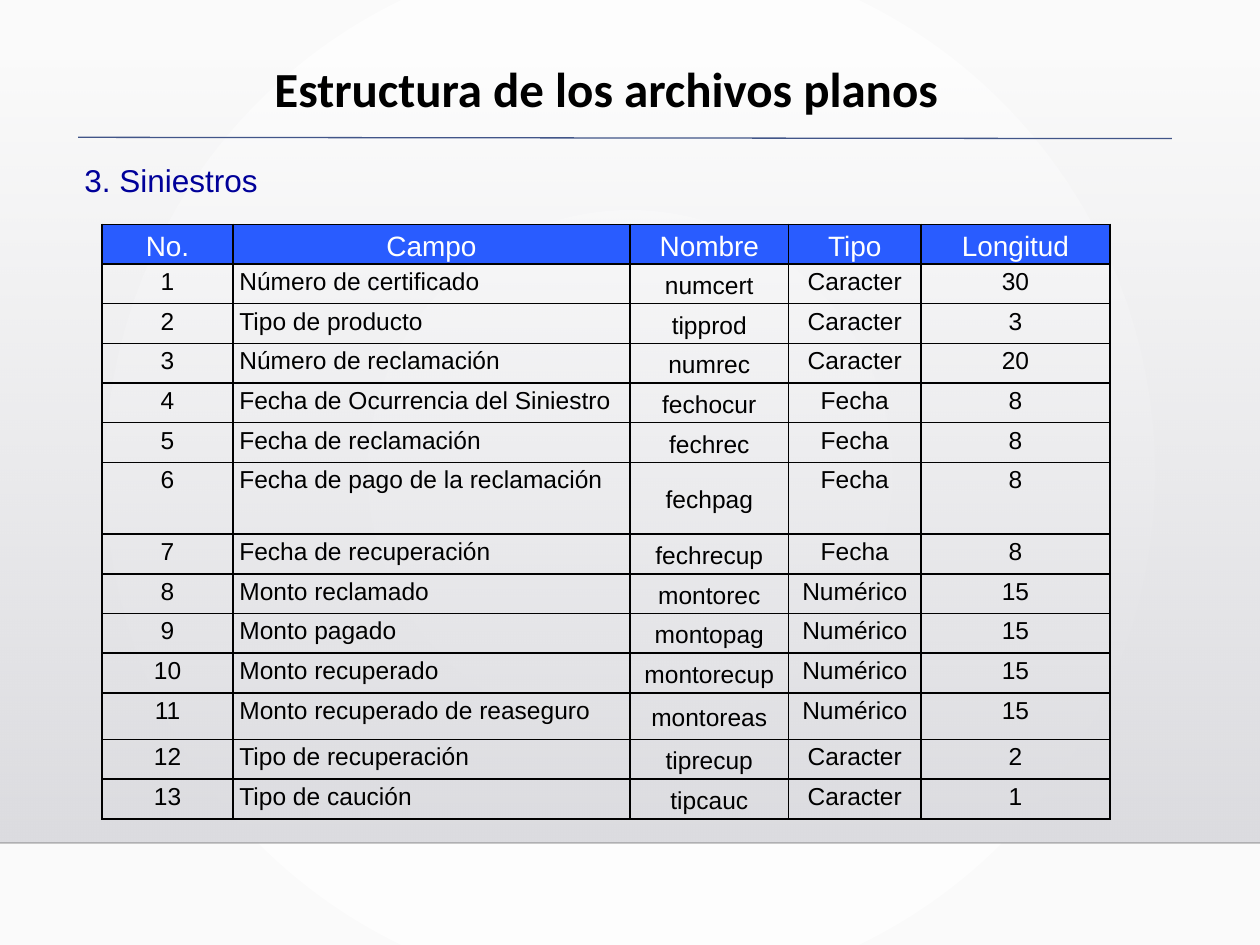
"""Build the slide that lists the fields of the claims file."""
import dataclasses

import lxml.etree
import pptx
import pptx.dml.color
import pptx.enum.shapes
import pptx.enum.text
import pptx.oxml
import pptx.oxml.ns
import pptx.util

Inches = pptx.util.Inches
ALIGN = pptx.enum.text.PP_ALIGN
ANCHOR = pptx.enum.text.MSO_ANCHOR
qn = pptx.oxml.ns.qn

HUES = {
    "black": "000000",
    "white": "FFFFFF",
    "paper": "FAFAFA",
    "mist": "DCDCE0",
    "fog": "DEDEE2",
    "edge": "000001",
    "rule": "415588",
    "navy": "000099",
    "blue": "295CFF",
}


@dataclasses.dataclass(frozen=True)
class Field:
    """One field of the flat file."""
    label: str
    code: str
    kind: str
    size: int
    height: float | None = None


@dataclasses.dataclass(frozen=True)
class Line:
    """A straight line with its ends in inches."""
    start: tuple[float, float]
    end: tuple[float, float]
    hue: str
    width: float
    alpha: int = 100


HEADS = ("No.", "Campo", "Nombre", "Tipo", "Longitud")
WIDTHS = (1.04, 3.15, 1.26, 1.05, 1.5)
TALL = 4.72
FIELDS = (
    Field("Número de certificado", "numcert", "Caracter", 30),
    Field("Tipo de producto", "tipprod", "Caracter", 3),
    Field("Número de reclamación", "numrec", "Caracter", 20),
    Field("Fecha de Ocurrencia del Siniestro", "fechocur", "Fecha", 8),
    Field("Fecha de reclamación", "fechrec", "Fecha", 8),
    Field("Fecha de pago de la reclamación", "fechpag", "Fecha", 8, 0.57),
    Field("Fecha de recuperación", "fechrecup", "Fecha", 8),
    Field("Monto reclamado", "montorec", "Numérico", 15),
    Field("Monto pagado", "montopag", "Numérico", 15),
    Field("Monto recuperado", "montorecup", "Numérico", 15),
    Field("Monto recuperado de reaseguro", "montoreas", "Numérico", 15, 0.37),
    Field("Tipo de recuperación", "tiprecup", "Caracter", 2),
    Field("Tipo de caución", "tipcauc", "Caracter", 1),
)


def tint(hue: str) -> pptx.dml.color.RGBColor:
    """Return a named colour."""
    return pptx.dml.color.RGBColor.from_string(HUES[hue])


def write(frame, text: str, *, size: float, hue: str = "black", font: str = "Arial",
          bold: bool = False, align=ALIGN.CENTER, space: float = 1, after: float = 0) -> None:
    """Put one formatted paragraph in a text frame."""
    frame.word_wrap = True
    para = frame.paragraphs[0]
    para.alignment = align
    para.line_spacing = space
    para.space_before = pptx.util.Pt(0)
    para.space_after = pptx.util.Pt(after)
    run = para.add_run()
    run.text = text
    run.font.size = pptx.util.Pt(size)
    run.font.name = font
    run.font.bold = bold
    run.font.color.rgb = tint(hue)


def place(shape, left: float, top: float, width: float, height: float) -> None:
    """Move and size a shape in inches."""
    shape.left, shape.top = Inches(left), Inches(top)
    shape.width, shape.height = Inches(width), Inches(height)


def fade(color, alpha: int) -> None:
    """Give a colour element an opacity in percent."""
    lxml.etree.SubElement(color, qn("a:alpha")).set("val", str(alpha * 1000))


def blend(fill, host, hues: tuple[str, str]):
    """Set a two-stop gradient and return its element."""
    fill.gradient()
    for stop, hue, spot in zip(fill.gradient_stops, hues, (0, 1)):
        stop.color.rgb = tint(hue)
        stop.position = spot
    return host.find(".//" + qn("a:gradFill"))


def paint(slide) -> None:
    """Draw the round background and the fading panel."""
    grad = blend(slide.background.fill, slide.element, ("white", "paper"))
    grad.remove(grad.find(qn("a:lin")))
    ring = lxml.etree.SubElement(grad, qn("a:path"), {"path": "circle"})
    lxml.etree.SubElement(ring, qn("a:fillToRect"), dict.fromkeys("ltrb", "50000"))

    panel = slide.shapes.add_shape(pptx.enum.shapes.MSO_SHAPE.RECTANGLE,
                                   0, Inches(0.51), Inches(10), Inches(6.18))
    panel.shadow.inherit = False
    panel.line.fill.background()
    grad = blend(panel.fill, panel.element, ("mist", "fog"))
    panel.fill.gradient_angle = 270
    for color, alpha in zip(grad.iter(qn("a:srgbClr")), (0, 100)):
        fade(color, alpha)


def stroke(slide, line: Line) -> None:
    """Draw a straight line."""
    ends = map(Inches, line.start + line.end)
    link = slide.shapes.add_connector(pptx.enum.shapes.MSO_CONNECTOR.STRAIGHT, *ends)
    link.line.width = pptx.util.Pt(line.width)
    link.line.color.rgb = tint(line.hue)
    if line.alpha < 100:
        fade(link.element.find(".//" + qn("a:srgbClr")), line.alpha)
    lxml.etree.SubElement(link.element.spPr, qn("a:effectLst"))


def frame(cell) -> None:
    """Draw a thin black border round a cell."""
    props = cell._tc.get_or_add_tcPr()
    for side in ("lnL", "lnR", "lnT", "lnB"):
        edge = lxml.etree.SubElement(props, qn("a:" + side), {"w": str(pptx.util.Pt(1))})
        solid = lxml.etree.SubElement(edge, qn("a:solidFill"))
        lxml.etree.SubElement(solid, qn("a:srgbClr"), {"val": HUES["black"]})


def fill_cell(cell, text: str, col: int, head: bool) -> None:
    """Format and fill one cell by its column and role."""
    frame(cell)
    cell.margin_left = cell.margin_right = Inches(0.05)
    cell.margin_top = cell.margin_bottom = 0
    mid = head or HEADS[col] == "Nombre"
    cell.vertical_anchor = ANCHOR.MIDDLE if mid else ANCHOR.TOP
    if head:
        cell.fill.solid()
        cell.fill.fore_color.rgb = tint("blue")
    else:
        cell.fill.background()
    left = HEADS[col] == "Campo" and not head
    write(cell.text_frame, text, size=16 if head else 14, hue="white" if head else "black",
          align=ALIGN.LEFT if left else ALIGN.CENTER, space=1.15, after=0 if mid else 10)


def add_grid(slide) -> None:
    """Draw the table of fields."""
    rows = [HEADS] + [(str(num), item.label, item.code, item.kind, str(item.size))
                      for num, item in enumerate(FIELDS, 1)]
    highs = [None] + [item.height for item in FIELDS]
    rest = (TALL - sum(high or 0 for high in highs)) / highs.count(None)
    grid = slide.shapes.add_table(len(rows), len(HEADS), Inches(0.81), Inches(1.78),
                                  Inches(sum(WIDTHS)), Inches(TALL)).table
    grid.horz_banding = False
    for col, width in zip(grid.columns, WIDTHS):
        col.width = Inches(width)
    for index, (texts, high) in enumerate(zip(rows, highs)):
        grid.rows[index].height = Inches(high or rest)
        for col, text in enumerate(texts):
            fill_cell(grid.cell(index, col), text, col, index == 0)


def main() -> None:
    """Build and save the slide."""
    deck = pptx.Presentation()
    deck.slide_width, deck.slide_height = Inches(10), Inches(7.5)
    slide = deck.slides.add_slide(deck.slide_layouts[5])
    paint(slide)
    stroke(slide, Line((0, 6.69), (10, 6.69), "edge", 1, 20))

    title = slide.shapes.title
    slide.shapes.element.append(title.element)
    place(title, 1.14, 0.41, 7.34, 0.57)
    write(title.text_frame, "Estructura de los archivos planos", size=28, font="Calibri", bold=True)
    stroke(slide, Line((0.62, 1.09), (9.3, 1.1), "rule", 0.75))

    head = slide.shapes.add_textbox(0, 0, 0, 0)
    place(head, 0.5, 1.23, 8.63, 0.4)
    head.text_frame.margin_left = Inches(0.17)
    write(head.text_frame, "3. Siniestros", size=18, hue="navy", align=ALIGN.JUSTIFY)
    add_grid(slide)
    deck.save("out.pptx")


if __name__ == "__main__":
    main()
